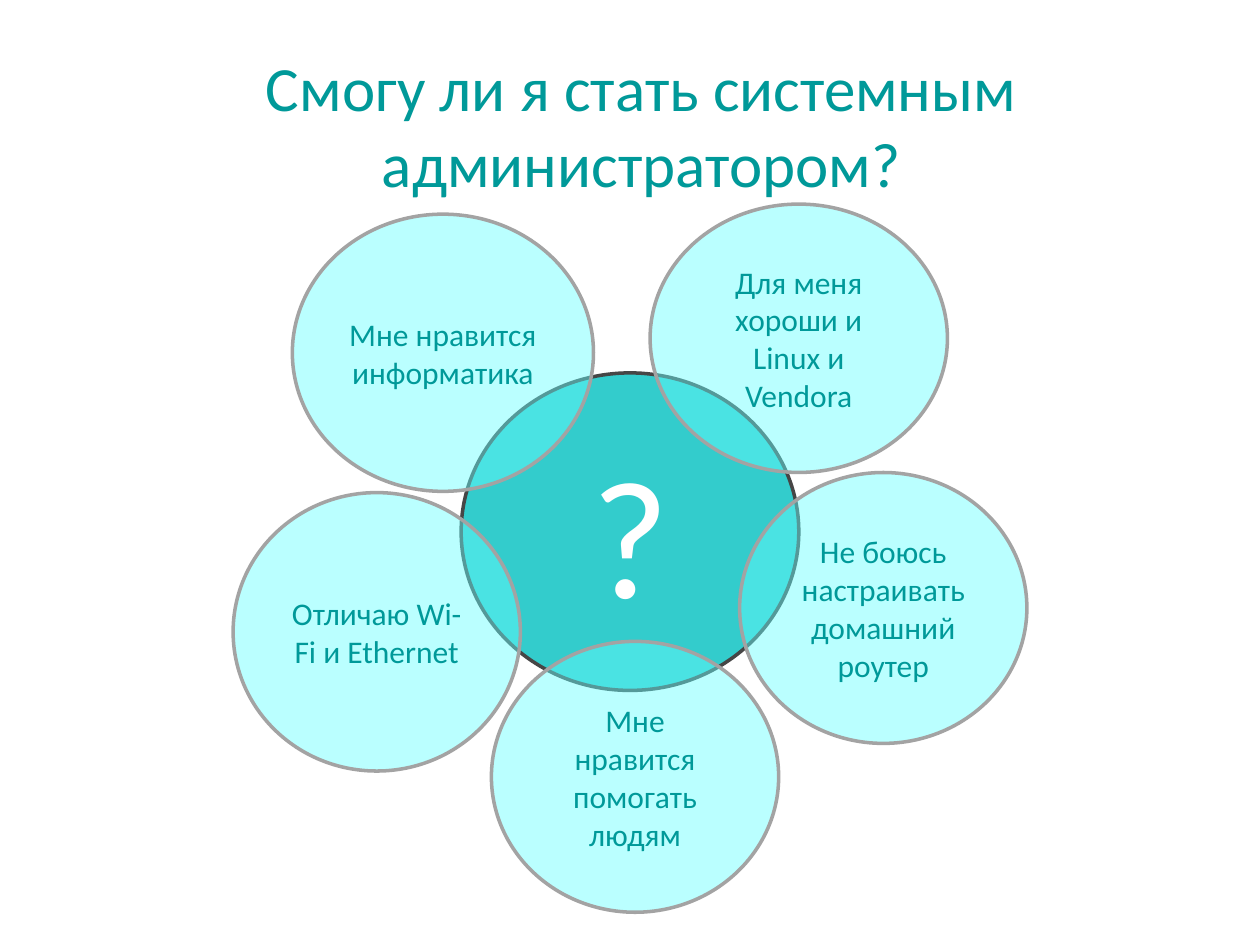
from lxml import etree
from pptx import Presentation
from pptx.dml.color import RGBColor
from pptx.enum.shapes import MSO_SHAPE
from pptx.enum.text import MSO_ANCHOR, PP_ALIGN
from pptx.oxml.ns import qn
from pptx.util import Inches, Pt

# Content: text and box (left, top, width, height in inches)
TITLE = ("Смогу ли я стать системным администратором?", (0.59, 0.36, 9, 1.25))
CENTER = ("?", (3.66, 2.96, 2.68, 2.52))
PETALS = [
    ("Для меня хороши и Linux и Vendora", (5.16, 1.62, 2.36, 2.13)),
    ("Мне нравится информатика", (2.32, 1.7, 2.39, 2.2)),
    ("Отличаю Wi-Fi и Ethernet", (1.85, 3.91, 2.28, 2.21)),
    ("Мне нравится помогать людям", (3.9, 5.09, 2.28, 2.15)),
    ("Не боюсь настраивать домашний роутер", (5.87, 3.75, 2.28, 2.15)),
]

THEME = {
    "font": "Calibri",
    "line_width": 2,
    "title": {"size": 36, "color": "009999"},
    "center": {"size": 96, "color": "FFFFFF", "fill": "33CCCC", "line": "464646"},
    "petal": {"size": 18, "color": "009999", "fill": "66FFFF", "line": "A3A3A3",
              "opacity": 45},
}


def write_text(shape, text, style):
    frame = shape.text_frame
    for name, value in {"word_wrap": True, "vertical_anchor": MSO_ANCHOR.MIDDLE}.items():
        setattr(frame, name, value)
    paragraph = frame.paragraphs[0]
    paragraph.alignment = PP_ALIGN.CENTER
    run = paragraph.add_run()
    run.text = text
    for name, value in {"name": THEME["font"], "size": Pt(style["size"])}.items():
        setattr(run.font, name, value)
    run.font.color.rgb = RGBColor.from_string(style["color"])


def add_circle(shapes, text, box, style):
    circle = shapes.add_shape(MSO_SHAPE.OVAL, *map(Inches, box))
    circle.shadow.inherit = False
    circle.fill.solid()
    circle.fill.fore_color.rgb = RGBColor.from_string(style["fill"])
    if "opacity" in style:
        color = circle.fill._xPr.find(qn("a:solidFill"))[0]
        etree.SubElement(color, qn("a:alpha"), val=str(style["opacity"] * 1000))
    circle.line.color.rgb = RGBColor.from_string(style["line"])
    circle.line.width = Pt(THEME["line_width"])
    write_text(circle, text, style)


def main():
    prs = Presentation()
    prs.slide_width, prs.slide_height = Inches(10), Inches(7.5)
    slide = prs.slides.add_slide(prs.slide_layouts[6])

    # Title
    title_text, title_box = TITLE
    title = slide.shapes.add_textbox(*map(Inches, title_box))
    write_text(title, title_text, THEME["title"])

    # Flower: centre first, petals over it
    flower = slide.shapes.add_group_shape()
    add_circle(flower.shapes, *CENTER, THEME["center"])
    for text, box in PETALS:
        add_circle(flower.shapes, text, box, THEME["petal"])

    prs.save("out.pptx")


if __name__ == "__main__":
    main()
